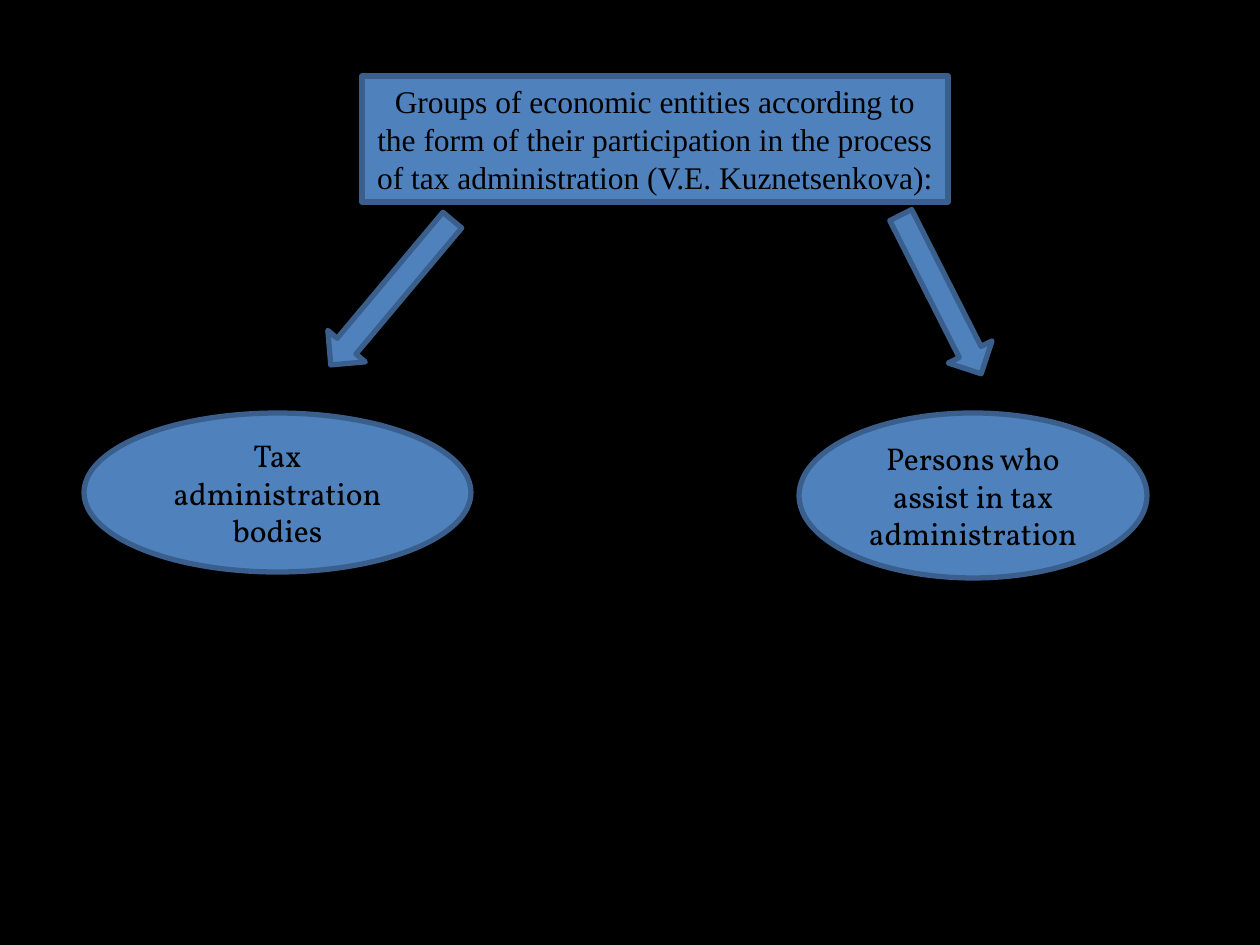
"""Builds a slide that splits economic entities into two groups of tax administration participants."""
from pptx import Presentation
from pptx.dml.color import RGBColor
from pptx.enum.shapes import MSO_SHAPE
from pptx.enum.text import MSO_ANCHOR, PP_ALIGN
from pptx.util import Inches, Pt

COLORS = {"background": "000000", "fill": "4F81BD", "line": "3A5F8C", "text": "000000"}
PX = Inches(1) / 126
SLIDE_SIZE = (1260, 945)

HEADING = (
    "Groups of economic entities according to the form of their participation "
    "in the process of tax administration (V.E. Kuznetsenkova):"
)
LABELED = [
    (MSO_SHAPE.RECTANGLE, (362, 76, 586, 126), HEADING, "Times New Roman"),
    (MSO_SHAPE.OVAL, (84, 413, 387, 159), "Tax administration bodies", "Vollkorn"),
    (MSO_SHAPE.OVAL, (799, 413, 348, 165), "Persons who assist in tax administration", "Vollkorn"),
]
ARROWS = [((852, 270, 178, 49), 63.1), ((297, 268, 189, 49), 130)]


def px(value):
    return round(value * PX)


def color(name):
    return RGBColor.from_string(COLORS[name])


def add_block(slide, kind, box):
    shape = slide.shapes.add_shape(kind, *map(px, box))
    shape.shadow.inherit = False
    shape.fill.solid()
    shape.fill.fore_color.rgb = color("fill")
    shape.line.color.rgb = color("line")
    shape.line.width = Pt(3)
    return shape


def add_label(shape, text, font):
    frame = shape.text_frame
    frame.word_wrap = True
    frame.vertical_anchor = MSO_ANCHOR.MIDDLE
    paragraph = frame.paragraphs[0]
    paragraph.alignment = PP_ALIGN.CENTER
    run = paragraph.add_run()
    run.text = text
    run.font.name = font
    run.font.size = Pt(18)
    run.font.color.rgb = color("text")


def main():
    presentation = Presentation()
    presentation.slide_width, presentation.slide_height = map(px, SLIDE_SIZE)
    slide = presentation.slides.add_slide(presentation.slide_layouts[6])
    slide.background.fill.solid()
    slide.background.fill.fore_color.rgb = color("background")
    for kind, box, text, font in LABELED:
        add_label(add_block(slide, kind, box), text, font)
    for box, angle in ARROWS:
        add_block(slide, MSO_SHAPE.RIGHT_ARROW, box).rotation = angle
    presentation.save("out.pptx")


if __name__ == "__main__":
    main()
